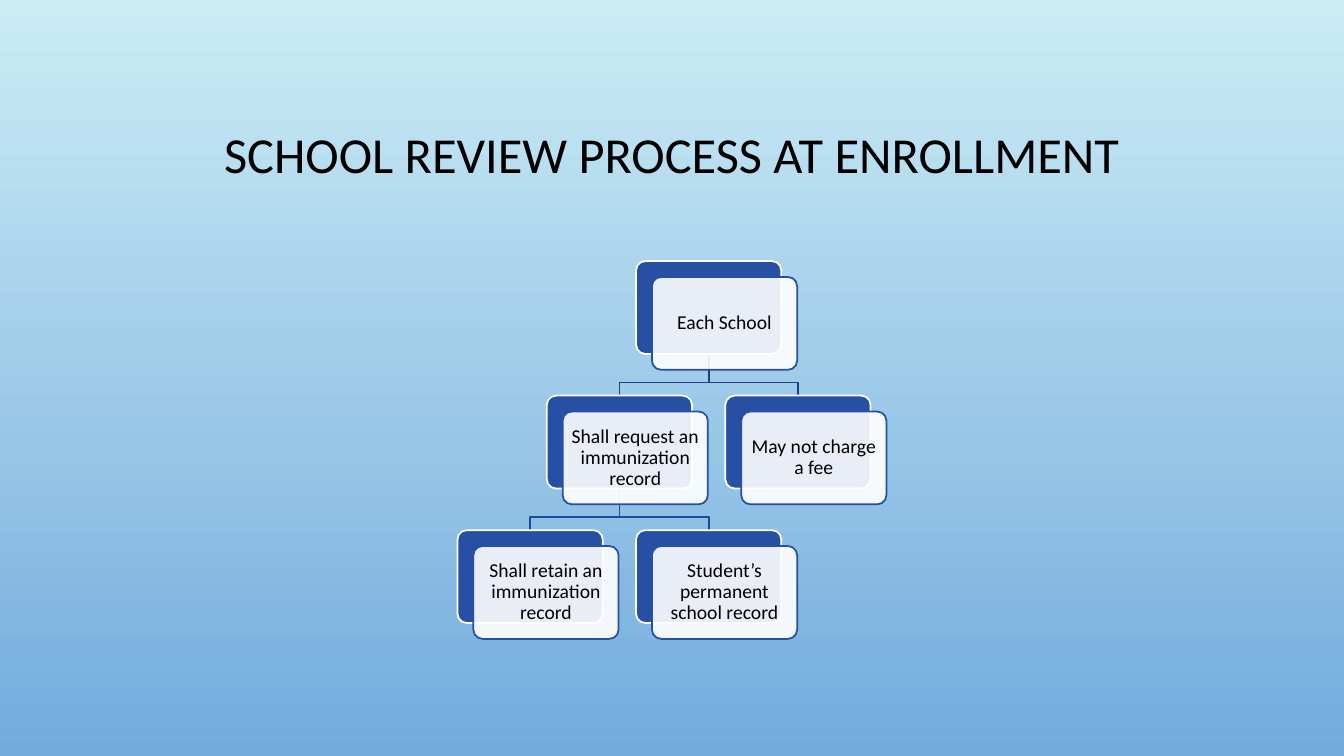
from pptx import Presentation
from pptx.dml.color import RGBColor
from pptx.enum.shapes import MSO_SHAPE
from pptx.enum.text import MSO_ANCHOR, PP_ALIGN
from pptx.oxml.ns import qn
from pptx.util import Cm, Pt
from lxml.etree import SubElement

SKY = RGBColor(0xCB, 0xEC, 0xF5)
BLUE = RGBColor(0x73, 0xAB, 0xDD)
NAVY = RGBColor(0x27, 0x4F, 0xA4)
UPPER_LINK = RGBColor(0x1F, 0x3F, 0x83)
LOWER_LINK = RGBColor(0x23, 0x48, 0x95)
WHITE = RGBColor(0xFF, 0xFF, 0xFF)
BLACK = RGBColor(0, 0, 0)

FONT = "Calibri"
LINE_WIDTH = Pt(1.25)
CHART_LEFT, CHART_TOP = Cm(11.53), Cm(6.58)
COLUMN_STEP, ROW_STEP = Cm(2.25), Cm(3.39)
CARD_WIDTH, CARD_HEIGHT = Cm(3.66), Cm(2.34)
FRONT_SHIFT = Cm(0.4)
LINK_BEND = Cm(0.72)
CARD_MARGIN = Cm(0.15)

# Each card: wording, column, row
SCHOOL = ("Each School", 2, 0)
REQUEST = ("Shall request an immunization record", 1, 1)
RETAIN = ("Shall retain an immunization record", 0, 2)
STUDENT = ("Student’s permanent school record", 2, 2)
NO_FEE = ("May not charge a fee", 3, 1)
CARDS = [SCHOOL, REQUEST, RETAIN, STUDENT, NO_FEE]
LINKS = [
    (SCHOOL, NO_FEE, UPPER_LINK),
    (REQUEST, STUDENT, LOWER_LINK),
    (REQUEST, RETAIN, LOWER_LINK),
    (SCHOOL, REQUEST, UPPER_LINK),
]


def paint_background(page):
    fill = page.background.fill
    fill.gradient()
    fill.gradient_angle = 270
    for stop, color in zip(fill.gradient_stops, (SKY, BLUE)):
        stop.color.rgb = color


def write_text(frame, text, size):
    frame.word_wrap = True
    frame.vertical_anchor = MSO_ANCHOR.MIDDLE
    para = frame.paragraphs[0]
    para.alignment = PP_ALIGN.CENTER
    para.line_spacing = 0.9
    span = para.add_run()
    span.text = text
    span.font.name = FONT
    span.font.size = Pt(size)
    span.font.color.rgb = BLACK


def set_title(page, text):
    title = page.shapes.title
    title.left, title.top = Cm(2.54), Cm(1.73)
    title.width, title.height = Cm(28.78), Cm(4.45)
    write_text(title.text_frame, text, 36)


def card_corner(card):
    _, column, row = card
    return CHART_LEFT + column * COLUMN_STEP, CHART_TOP + row * ROW_STEP


def add_link(page, parent, child, color):
    """Draw the elbow line from the foot of parent to the top of child."""
    parent_left, parent_top = card_corner(parent)
    child_left, child_top = card_corner(child)
    start_x, end_x = parent_left + CARD_WIDTH // 2, child_left + CARD_WIDTH // 2
    start_y = parent_top + CARD_HEIGHT
    bend_y = start_y + LINK_BEND
    builder = page.shapes.build_freeform(start_x, start_y)
    builder.add_line_segments(
        [(start_x, bend_y), (end_x, bend_y), (end_x, child_top)], close=False)
    link = builder.convert_to_shape()
    link.shadow.inherit = False
    link.fill.background()
    link.line.color.rgb = color
    link.line.width = LINE_WIDTH


def add_panel(page, left, top, fill_color, line_color):
    panel = page.shapes.add_shape(
        MSO_SHAPE.ROUNDED_RECTANGLE, left, top, CARD_WIDTH, CARD_HEIGHT)
    panel.adjustments[0] = 0.1
    panel.shadow.inherit = False
    panel.fill.solid()
    panel.fill.fore_color.rgb = fill_color
    panel.line.color.rgb = line_color
    panel.line.width = LINE_WIDTH
    return panel


def set_opacity(shape, percent):
    color = shape.element.spPr.find(qn("a:solidFill"))[0]
    SubElement(color, qn("a:alpha")).set("val", str(percent * 1000))


def add_card(page, card):
    left, top = card_corner(card)
    add_panel(page, left, top, NAVY, WHITE)
    front = add_panel(page, left + FRONT_SHIFT, top + FRONT_SHIFT, WHITE, NAVY)
    set_opacity(front, 90)
    frame = front.text_frame
    frame.margin_left = frame.margin_right = CARD_MARGIN
    frame.margin_top = frame.margin_bottom = CARD_MARGIN
    write_text(frame, card[0], 14)


def main():
    deck = Presentation()
    deck.slide_width, deck.slide_height = Cm(33.87), Cm(19.05)
    page = deck.slides.add_slide(deck.slide_layouts.get_by_name("Title Only"))
    paint_background(page)
    set_title(page, "SCHOOL REVIEW PROCESS AT ENROLLMENT")
    for parent, child, color in LINKS:
        add_link(page, parent, child, color)
    for card in CARDS:
        add_card(page, card)
    deck.save("out.pptx")


if __name__ == "__main__":
    main()
